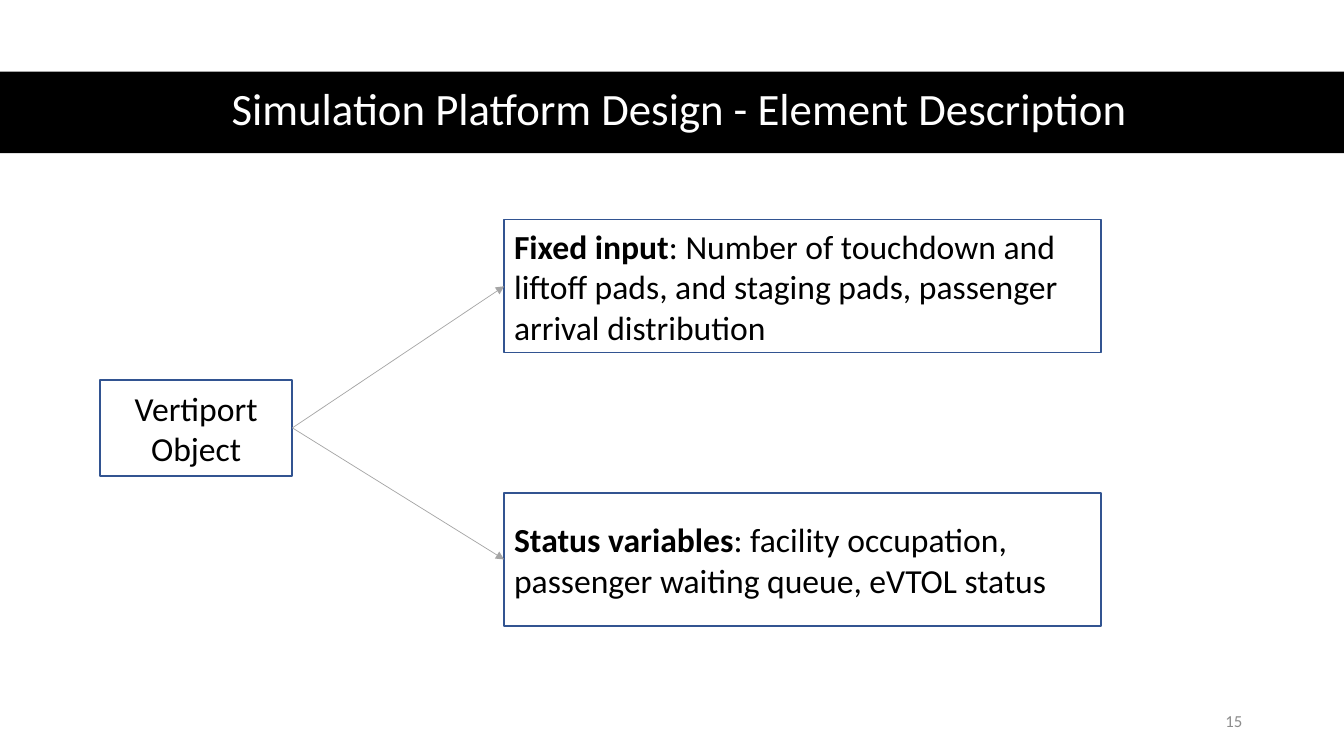
from lxml import etree
from pptx import Presentation
from pptx.dml.color import RGBColor
from pptx.enum.shapes import MSO_CONNECTOR, MSO_SHAPE
from pptx.enum.text import MSO_ANCHOR, MSO_AUTO_SIZE, PP_ALIGN
from pptx.oxml.ns import qn
from pptx.util import Inches, Pt

TITLE = "Simulation Platform Design - Element Description"
SOURCE = "Vertiport Object"
DETAILS = [
    ("Fixed input", ": Number of touchdown and liftoff pads, and staging pads, "
                    "passenger arrival distribution"),
    ("Status variables", ": facility occupation, passenger waiting queue, eVTOL status"),
]
PAGE_NUMBER = "15"

FONT = "Calibri"
BLACK = RGBColor(0x00, 0x00, 0x00)
WHITE = RGBColor(0xFF, 0xFF, 0xFF)
BLUE = RGBColor(0x32, 0x54, 0x91)
ARROW_GRAY = RGBColor(0xA5, 0xA5, 0xA5)
NUMBER_GRAY = RGBColor(0x8C, 0x8C, 0x8C)
LEFT, CENTER, RIGHT = PP_ALIGN.LEFT, PP_ALIGN.CENTER, PP_ALIGN.RIGHT
MIDDLE = MSO_ANCHOR.MIDDLE
RECTANGLE = MSO_SHAPE.RECTANGLE
LEFT_SIDE, RIGHT_SIDE = 1, 3

SLIDE_WIDTH, SLIDE_HEIGHT = 13.33, 7.5
BAND_TOP, BAND_HEIGHT = 0.71, 0.81
DETAIL_LEFT, DETAIL_TOP, DETAIL_STEP = 5, 2.18, 2.71
DETAIL_WIDTH, DETAIL_HEIGHT = 5.92, 1.32  # tall enough for three lines


def inches(*lengths):
    return [Inches(length) for length in lengths]


def write(shape, runs, size, color, alignment):
    """Fill a shape with one paragraph of (text, bold) runs."""
    frame = shape.text_frame
    frame.word_wrap = True
    frame.auto_size = MSO_AUTO_SIZE.NONE
    frame.vertical_anchor = MIDDLE
    paragraph = frame.paragraphs[0]
    paragraph.alignment = alignment
    for text, bold in runs:
        run = paragraph.add_run()
        run.text = text
        run.font.name = FONT
        run.font.size = Pt(size)
        run.font.bold = bold
        run.font.color.rgb = color
    return paragraph


def add_box(slide, bounds, runs, line_width, alignment):
    box = slide.shapes.add_shape(RECTANGLE, *inches(*bounds))
    box.shadow.inherit = False
    box.fill.background()
    box.line.color.rgb = BLUE
    box.line.width = Pt(line_width)
    write(box, runs, 24, BLACK, alignment)
    return box


def add_arrow(slide, start, end):
    arrow = slide.shapes.add_connector(MSO_CONNECTOR.STRAIGHT, 0, 0, 0, 0)
    arrow.begin_connect(start, RIGHT_SIDE)
    arrow.end_connect(end, LEFT_SIDE)
    arrow.line.color.rgb = ARROW_GRAY
    arrow.line.width = Pt(0.5)
    etree.SubElement(arrow.line._get_or_add_ln(), qn("a:tailEnd"), type="triangle")
    etree.SubElement(arrow._element.spPr, qn("a:effectLst"))


def add_title(slide):
    band = slide.shapes.add_shape(
        RECTANGLE, *inches(0, BAND_TOP, SLIDE_WIDTH, BAND_HEIGHT))
    band.shadow.inherit = False
    band.fill.solid()
    band.fill.fore_color.rgb = BLACK
    band.line.fill.background()

    title = slide.shapes.title
    title.left, title.top, title.width, title.height = inches(0.61, 0.7, 12.26, BAND_HEIGHT)
    frame = title.text_frame
    frame.margin_left = frame.margin_right = Inches(0.13)
    frame.margin_top = frame.margin_bottom = Inches(0.07)
    paragraph = write(title, [(TITLE, False)], 32, WHITE, CENTER)
    paragraph.line_spacing = 0.9
    title._element.addprevious(band._element)  # band goes behind the title


def main():
    presentation = Presentation()
    presentation.slide_width, presentation.slide_height = inches(SLIDE_WIDTH, SLIDE_HEIGHT)
    slide = presentation.slides.add_slide(presentation.slide_layouts.get_by_name("Title Only"))
    add_title(slide)

    detail_boxes = []
    for index, (label, description) in enumerate(DETAILS):
        bounds = (DETAIL_LEFT, DETAIL_TOP + index * DETAIL_STEP, DETAIL_WIDTH, DETAIL_HEIGHT)
        runs = [(label, True), (description, False)]
        detail_boxes.append(add_box(slide, bounds, runs, 1, LEFT))

    source_box = add_box(slide, (0.99, 3.77, 1.91, 0.95), [(SOURCE, False)], 1.5, CENTER)
    for detail_box in detail_boxes:
        add_arrow(slide, source_box, detail_box)

    number = slide.shapes.add_textbox(*inches(9.42, 6.95, 3, 0.4))
    write(number, [(PAGE_NUMBER, False)], 12, NUMBER_GRAY, RIGHT)
    presentation.save("out.pptx")


if __name__ == "__main__":
    main()
